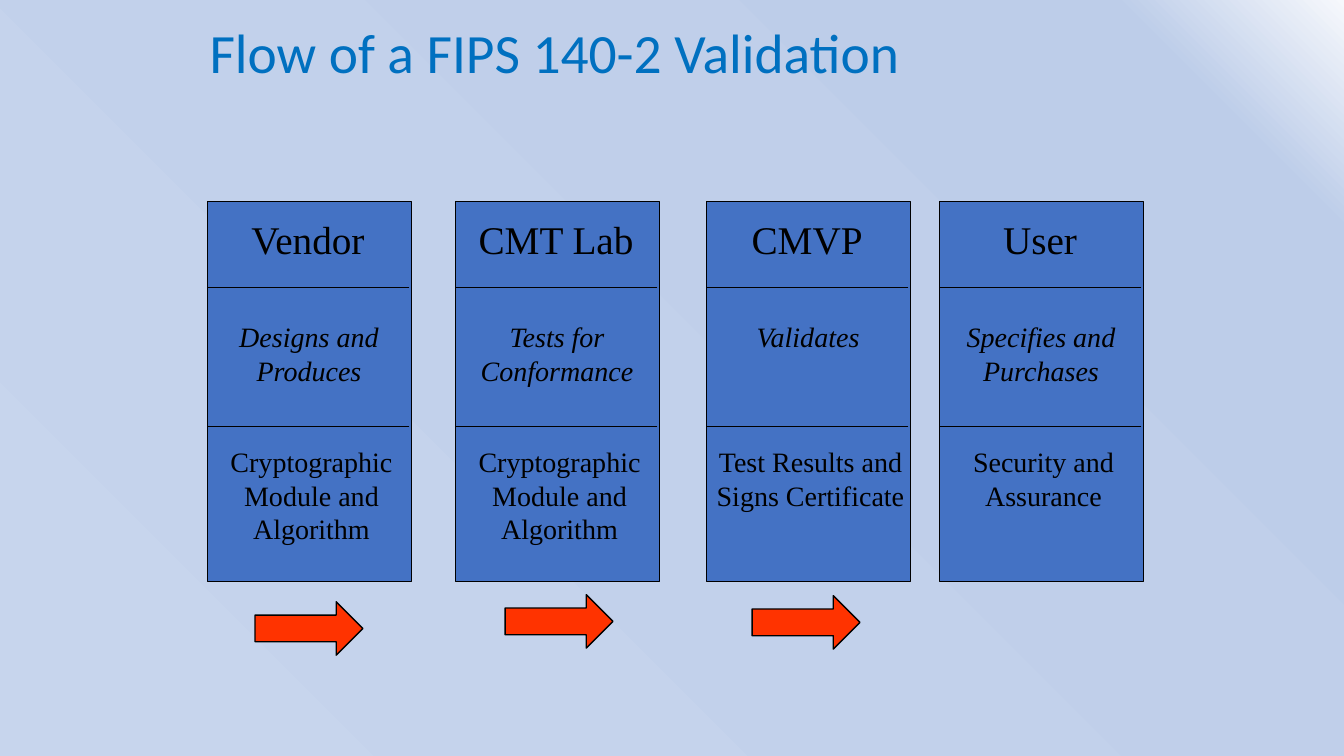
from copy import deepcopy

from pptx import Presentation
from pptx.dml.color import RGBColor
from pptx.enum import shapes, text
from pptx.oxml import ns
from pptx.util import Inches, Pt


def color(value):
    return RGBColor.from_string(value)


def add_text(words, left, top, width, height, size, italic=False,
             font="Times New Roman", ink="000000"):
    box = page.shapes.add_textbox(Inches(left), Inches(top), Inches(width), Inches(height))
    box.text_frame.word_wrap = True
    para = box.text_frame.paragraphs[0]
    para.text = words
    para.alignment = text.PP_ALIGN.CENTER
    para.font.name = font
    para.font.size = Pt(size)
    para.font.italic = italic
    para.font.color.rgb = color(ink)
    return box


deck = Presentation()
deck.slide_width = Inches(13.33)
deck.slide_height = Inches(7.5)
page = deck.slides.add_slide(deck.slide_layouts[6])

# Background gradient, from the top right corner
background = page.background.fill
background.gradient()
background.gradient_angle = 225
stop_list = page.element.find(".//" + ns.qn("a:gsLst"))
stop_list.append(deepcopy(stop_list[-1]))
stops = [(0, "F6F8FC"), (0.11, "BDCDE9"), (1, "C7D5ED")]
for stop, (position, tint) in zip(background.gradient_stops, stops):
    stop.position = position
    stop.color.rgb = color(tint)

# Title
title = add_text("Flow of a FIPS 140-2 Validation", 1.98, 0.2, 9.37, 0.71, 39.6,
                 font="Calibri", ink="0070C0")
title.text_frame.vertical_anchor = text.MSO_ANCHOR.MIDDLE
title.text_frame.paragraphs[0].alignment = text.PP_ALIGN.LEFT
title.text_frame.paragraphs[0].line_spacing = 0.9

# Columns: left edge, role, action, subject
columns = [
    (2.06, "Vendor", "Designs and Produces", "Cryptographic Module and Algorithm"),
    (4.52, "CMT Lab", "Tests for Conformance", "Cryptographic Module and Algorithm"),
    (7.01, "CMVP", "Validates", "Test Results and Signs Certificate"),
    (9.32, "User", "Specifies and Purchases", "Security and Assurance"),
]
blocks = [(shapes.MSO_SHAPE.RECTANGLE, left, 2, 2.02, 3.77, "4472C4", 0.75)
          for left, *_ in columns]
arrows = [(shapes.MSO_SHAPE.RIGHT_ARROW, left, top, 1.07, 0.53, "FF3300", 1)
          for left, top in [(2.53, 5.97), (5.01, 5.9), (7.46, 5.91)]]

# Column blocks and the arrows below them
for kind, left, top, width, height, paint, weight in blocks + arrows:
    shape = page.shapes.add_shape(kind, Inches(left), Inches(top), Inches(width), Inches(height))
    shape.shadow.inherit = False
    shape.fill.solid()
    shape.fill.fore_color.rgb = color(paint)
    shape.line.color.rgb = color("000000")
    shape.line.width = Pt(weight)

# Dividers and words in each column
for left, role, action, subject in columns:
    for height in (2.85, 4.23):
        divider = page.shapes.add_connector(
            shapes.MSO_CONNECTOR.STRAIGHT,
            Inches(left + 2), Inches(height), Inches(left), Inches(height))
        divider.line.color.rgb = color("000000")
        divider.line.width = Pt(0.75)
        divider.element.spPr.append(divider.element.makeelement(ns.qn("a:effectLst")))
    add_text(role, left + 0.04, 2.09, 1.91, 0.57, 28)
    add_text(action, left, 3.12, 2.01, 0.77, 20, italic=True)
    add_text(subject, left, 4.36, 2.06, 1.1, 20)

deck.save("out.pptx")
